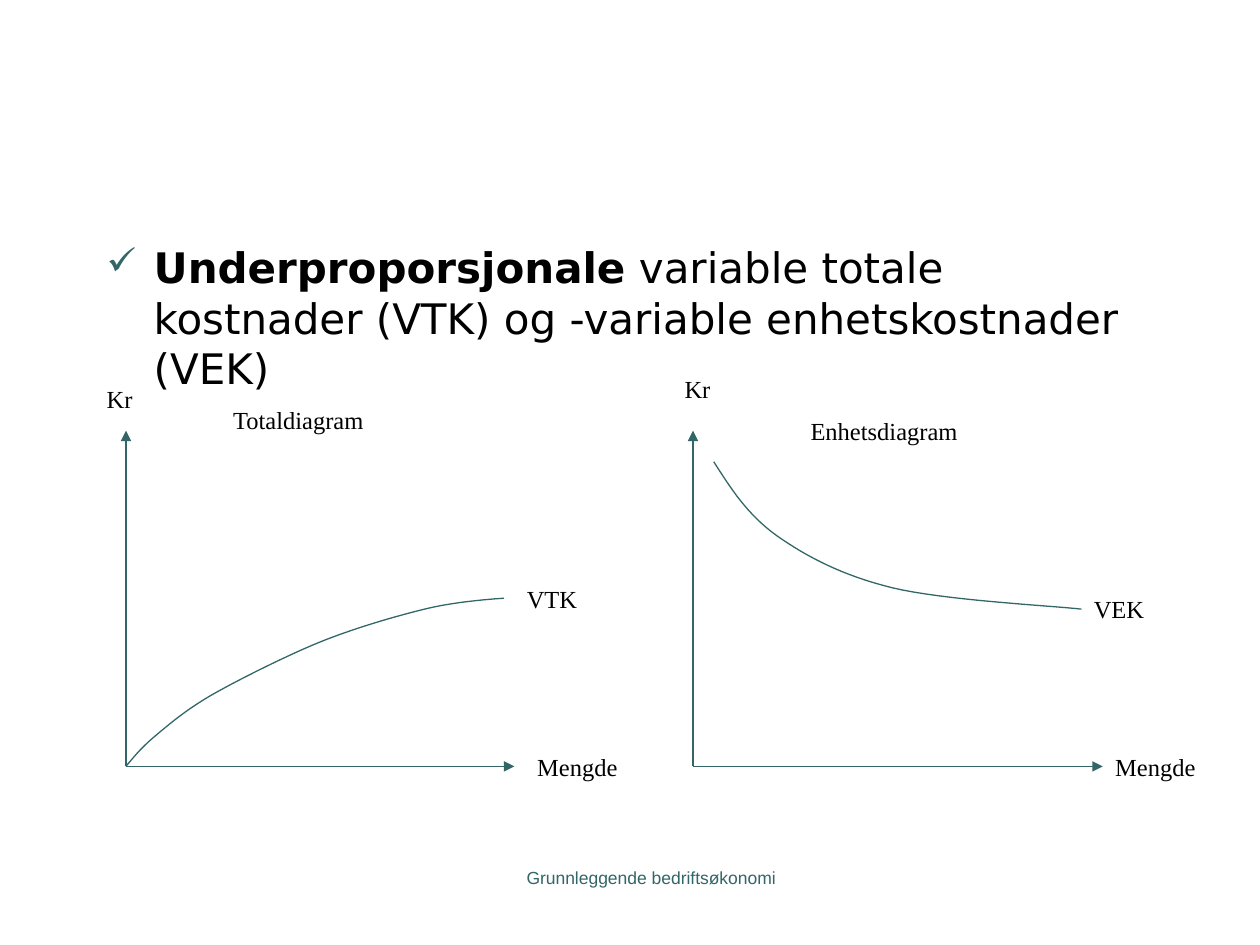
"""Build a slide with total and unit cost diagrams for variable costs."""
from lxml.etree import SubElement
from pptx import Presentation
from pptx.dml.color import RGBColor
from pptx.enum.shapes import MSO_CONNECTOR
from pptx.enum.text import PP_ALIGN
from pptx.oxml.ns import qn
from pptx.util import Cm, Pt

TEAL, BLACK = "336666", "000000"
SERIF = "Times New Roman"
FOOT = "Grunnleggende bedriftsøkonomi"
LEAD = [
    ("Underproporsjonale", True),
    (" variable totale kostnader (VTK) og -variable enhetskostnader (VEK)", False),
]
BASE, TOP = 15.45, 8.68
PLOTS = [
    {
        "left": 13.97, "right": 22.23,
        "labels": [("Kr", 13.55, 7.41), ("Mengde", 22.23, 15.03),
                   ("Enhetsdiagram", 16.09, 8.26), ("VEK", 21.8, 11.85)],
        "curve": [(14.39, 9.31), (14.73, 9.84), (15.06, 10.37), (15.66, 10.8),
                  (16.26, 11.22), (16.97, 11.6), (17.99, 11.85),
                  (19.02, 12.1), (21.16, 12.21), (21.8, 12.28)],
    },
    {
        "left": 2.54, "right": 10.37,
        "labels": [("Kr", 1.9, 7.62), ("Mengde", 10.58, 15.03),
                   ("Totaldiagram", 4.45, 8.05), ("VTK", 10.37, 11.64)],
        "curve": [(2.54, 15.45), (2.7, 15.26), (2.85, 15.07), (3.15, 14.82),
                  (3.45, 14.57), (3.79, 14.28), (4.34, 13.97),
                  (4.9, 13.66), (5.83, 13.19), (6.56, 12.9),
                  (7.26, 12.63), (7.96, 12.43), (8.56, 12.28),
                  (9.17, 12.13), (9.89, 12.08), (10.16, 12.06)],
    },
]
WIDTHS = {"Kr": 2.1, "Mengde": 2.34, "VTK": 2.1, "VEK": 2.1}


def paint(code):
    return RGBColor.from_string(code)


def style(para, face, size, code):
    font = para.font
    font.name, font.size = face, Pt(size)
    font.color.rgb = paint(code)


def add_box(slide, x, y, wide, high):
    frame = slide.shapes.add_textbox(Cm(x), Cm(y), Cm(wide), Cm(high)).text_frame
    frame.word_wrap = True
    return frame.paragraphs[0]


def add_lead(slide):
    para = add_box(slide, 1.9, 4.75, 21.6, 12.17)
    props = para._p.get_or_add_pPr()
    props.set("marL", str(Cm(0.95)))
    props.set("indent", str(Cm(-0.95)))
    tint = SubElement(props, qn("a:buClr"))
    SubElement(tint, qn("a:srgbClr"), val=TEAL)
    SubElement(props, qn("a:buSzPct"), val="90000")
    SubElement(props, qn("a:buChar"), char="✓")
    style(para, "DejaVu Sans", 24, BLACK)
    for text, bold in LEAD:
        run = para.add_run()
        run.text, run.font.bold = text, bold


def add_axis(slide, start, end):
    axis = slide.shapes.add_connector(
        MSO_CONNECTOR.STRAIGHT, *(Cm(v) for v in start + end))
    axis.line.color.rgb = paint(TEAL)
    axis.line.width = Pt(0.75)
    SubElement(axis.line._get_or_add_ln(), qn("a:tailEnd"), type="triangle")
    SubElement(axis._element.spPr, qn("a:effectLst"))


def trace(knots, steps=16):
    dots = [knots[0]]
    for i in range(0, len(knots) - 1, 3):
        for n in range(1, steps + 1):
            t = n / steps
            parts = ((1 - t) ** 3, 3 * t * (1 - t) ** 2, 3 * t * t * (1 - t), t ** 3)
            dots.append(tuple(sum(w * v for w, v in zip(parts, line))
                              for line in zip(*knots[i:i + 4])))
    return [(Cm(x), Cm(y)) for x, y in dots]


def add_curve(slide, knots):
    first, *rest = trace(knots)
    pen = slide.shapes.build_freeform(*first)
    pen.add_line_segments(rest, close=False)
    curve = pen.convert_to_shape()
    curve.shadow.inherit = False
    curve.fill.background()
    curve.line.color.rgb = paint(TEAL)
    curve.line.width = Pt(0.75)


def add_plot(slide, plot):
    base = (plot["left"], BASE)
    for end in ((plot["left"], TOP), (plot["right"], BASE)):
        add_axis(slide, base, end)
    for text, x, y in plot["labels"]:
        para = add_box(slide, x, y, WIDTHS.get(text, 5.28), 0.85)
        para.text = text
        style(para, SERIF, 14, BLACK)
    add_curve(slide, plot["curve"])


def main():
    deck = Presentation()
    deck.slide_width, deck.slide_height = Cm(25.4), Cm(19.05)
    slide = deck.slides.add_slide(deck.slide_layouts[6])
    foot = add_box(slide, 9.1, 17.36, 8.05, 1.27)
    foot.text, foot.alignment = FOOT, PP_ALIGN.CENTER
    style(foot, "Arial", 10, TEAL)
    add_lead(slide)
    for plot in PLOTS:
        add_plot(slide, plot)
    deck.save("out.pptx")


if __name__ == "__main__":
    main()
